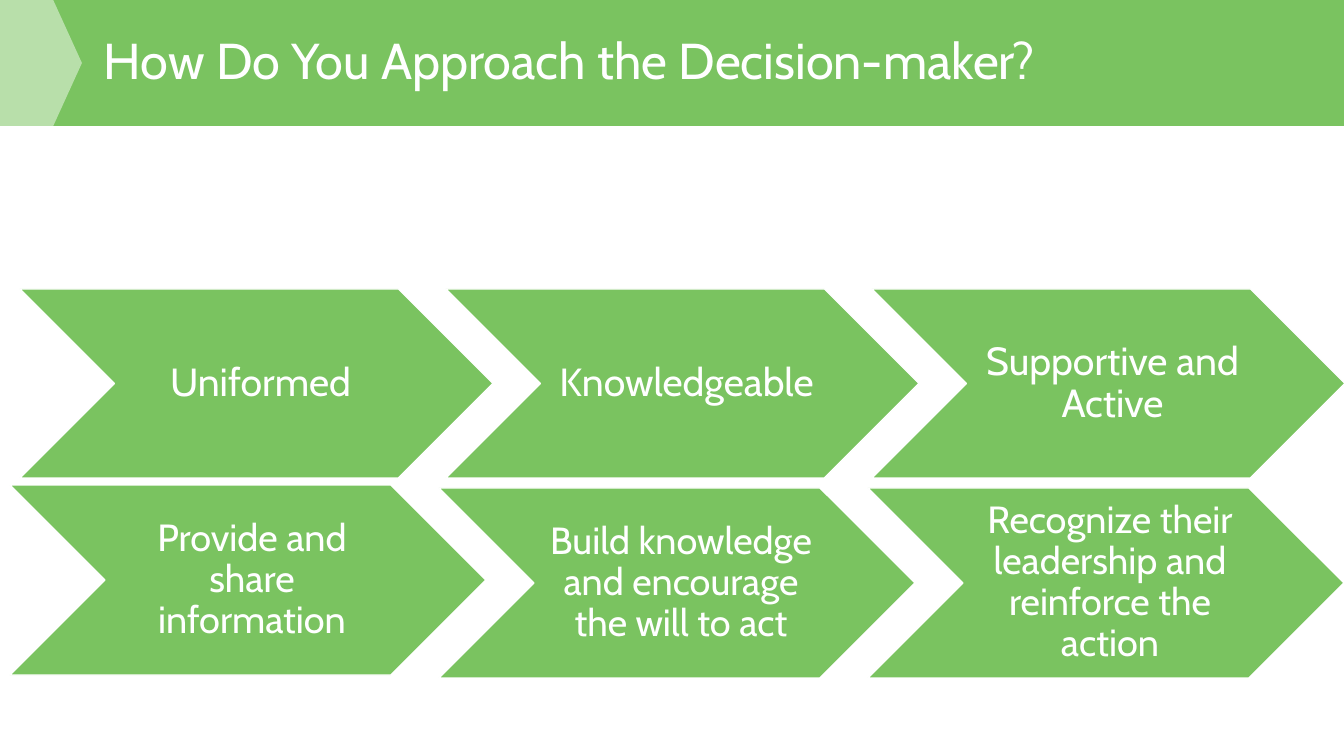
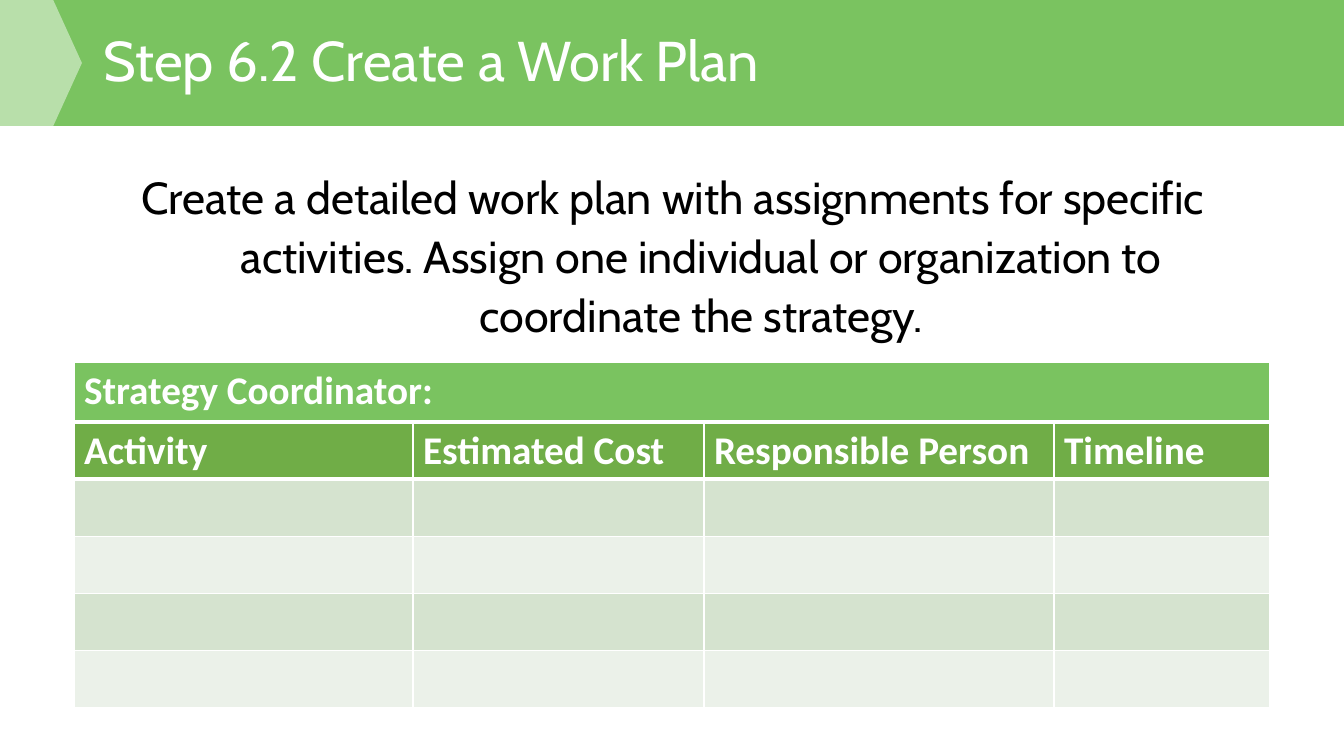
import lxml.etree
import pptx
import pptx.dml.color
import pptx.enum.shapes
import pptx.enum.text
import pptx.oxml.ns
import pptx.util

PX = 9071
GREEN, DARK_GREEN, WHITE, BLACK = "7AC360", "70AD47", "FFFFFF", "000000"
BAND_TINTS = ["D5E3CF", "EBF1E9"]
SHAPES = pptx.enum.shapes.MSO_SHAPE
CENTER = pptx.enum.text.PP_ALIGN.CENTER
MIDDLE = pptx.enum.text.MSO_ANCHOR.MIDDLE
qn = pptx.oxml.ns.qn


def rgb(color):
    return pptx.dml.color.RGBColor.from_string(color)


def write(frame, text, color, frame_format, paragraph_format, font_format):
    frame.text = text
    paragraph = frame.paragraphs[0]
    font = paragraph.runs[0].font
    font.color.rgb = rgb(color)
    for target, values in (
        (frame, frame_format),
        (paragraph, paragraph_format),
        (font, font_format),
    ):
        for attribute, value in values.items():
            setattr(target, attribute, value)
    return paragraph


deck = pptx.Presentation()
deck.slide_width = 1344 * PX
deck.slide_height = 756 * PX

slides = []
for heading, heading_size in (
    ("How Do You Approach the Decision-maker?", 36),
    ("Step 6.2 Create a Work Plan", 40),
):
    slide = deck.slides.add_slide(deck.slide_layouts[6])
    slides.append(slide)
    for outline, width, color in (
        (SHAPES.RECTANGLE, 1344, GREEN),
        (SHAPES.PENTAGON, 82, WHITE),
    ):
        band = slide.shapes.add_shape(outline, 0, 0, width * PX, 126 * PX)
        band.shadow.inherit = False
        band.fill.solid()
        band.fill.fore_color.rgb = rgb(color)
        band.line.fill.background()
    band.adjustments[0] = 0.35
    tint = band.element.spPr.find(".//" + qn("a:srgbClr"))
    lxml.etree.SubElement(tint, qn("a:alpha"), val="47000")

    title = slide.shapes.add_textbox(94 * PX, 20 * PX, 1066 * PX, 87 * PX)
    write(
        title.text_frame, heading, WHITE,
        {"word_wrap": True, "vertical_anchor": MIDDLE},
        {"line_spacing": 0.9},
        {"name": "Cabin", "size": pptx.util.Pt(heading_size)},
    )

approach_slide, plan_slide = slides

chevron_frame = {
    "word_wrap": True,
    "vertical_anchor": MIDDLE,
    "margin_left": 12 * PX,
    "margin_top": 4 * PX,
    "margin_right": 4 * PX,
    "margin_bottom": 4 * PX,
}
actions = [
    "Provide and share information",
    "Build knowledge and encourage the will to act",
    "Recognize their leadership and reinforce the action",
]
stages = ["Uniformed", "Knowledgeable", "Supportive and Active"]
for labels, left, tops, step, width, height, size in (
    (actions, 10, [485, 488, 488], 429, 476, 190, 27),
    (stages, 20, [289, 289, 289], 426, 473, 189, 28),
):
    for index, (label, top) in enumerate(zip(labels, tops)):
        chevron = approach_slide.shapes.add_shape(
            SHAPES.CHEVRON,
            (left + index * step) * PX, top * PX, width * PX, height * PX,
        )
        chevron.shadow.inherit = False
        chevron.fill.solid()
        chevron.fill.fore_color.rgb = rgb(GREEN)
        chevron.line.color.rgb = rgb(WHITE)
        chevron.line.width = pptx.util.Pt(1)
        write(
            chevron.text_frame, label, WHITE, chevron_frame,
            {"alignment": CENTER, "line_spacing": 0.9},
            {"name": "Cabin", "size": pptx.util.Pt(size)},
        )

instruction = plan_slide.shapes.add_textbox(94 * PX, 159 * PX, 1159 * PX, 521 * PX)
instruction_paragraph = write(
    instruction.text_frame,
    "Create a detailed work plan with assignments for specific activities. "
    "Assign one individual or organization to coordinate the strategy.",
    BLACK,
    {"word_wrap": True},
    {"alignment": CENTER, "line_spacing": 1.1},
    {"name": "Cabin", "size": pptx.util.Pt(32)},
)
indents = instruction_paragraph._p.get_or_add_pPr()
indents.set("marL", str(56 * PX))
indents.set("indent", str(-56 * PX))

activity_columns = ["Activity", "Estimated Cost", "Responsible Person", "Timeline"]
for headers, header_fill, top, widths, row_height, row_count in (
    (activity_columns, DARK_GREEN, 422, [339, 291, 350, 216], 57, 5),
    (["Strategy Coordinator:"], GREEN, 362, [1196], 60, 1),
):
    plan = plan_slide.shapes.add_table(
        row_count, len(widths),
        74 * PX, top * PX, sum(widths) * PX, row_count * row_height * PX,
    ).table
    plan.horz_banding = False
    for column, width in zip(plan.columns, widths):
        column.width = width * PX
    for row_index, row in enumerate(plan.rows):
        row.height = row_height * PX
        for column_index, cell in enumerate(row.cells):
            is_header = row_index == 0
            borders = {
                "a:lnL": 1,
                "a:lnR": 1,
                "a:lnT": 3 if row_index == 1 else 1,
                "a:lnB": 3 if is_header else 1,
            }
            for side, points in borders.items():
                border = lxml.etree.SubElement(
                    cell._tc.get_or_add_tcPr(), qn(side), w=str(pptx.util.Pt(points))
                )
                border_fill = lxml.etree.SubElement(border, qn("a:solidFill"))
                lxml.etree.SubElement(border_fill, qn("a:srgbClr"), val=WHITE)
            cell.fill.solid()
            cell.fill.fore_color.rgb = rgb(
                header_fill if is_header else BAND_TINTS[(row_index - 1) % 2]
            )
            if is_header:
                write(
                    cell.text_frame, headers[column_index], WHITE, {}, {},
                    {"name": "Calibri", "size": pptx.util.Pt(28), "bold": True},
                )

deck.save("out.pptx")
